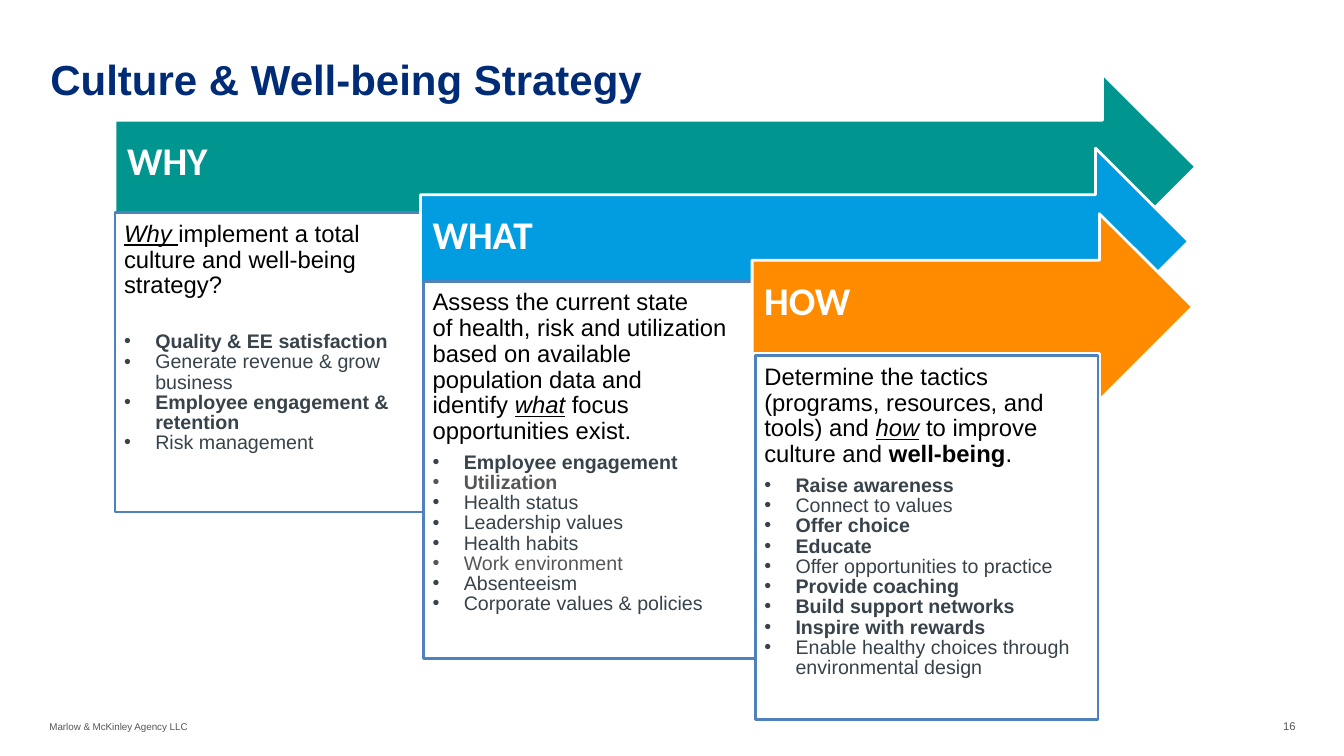
from lxml import etree
from pptx import Presentation
from pptx.dml.color import RGBColor
from pptx.enum import shapes, text
from pptx.oxml import ns
from pptx.util import Inches, Pt

NAVY = RGBColor(0x00, 0x2B, 0x76)
TEAL = RGBColor(0x00, 0x96, 0x8F)
BLUE = RGBColor(0x01, 0x9D, 0xE0)
ORANGE = RGBColor(0xFF, 0x8C, 0x00)
BORDER = RGBColor(0x4F, 0x81, 0xBD)
SLATE = RGBColor(0x37, 0x42, 0x4A)
GREY = RGBColor(0x56, 0x56, 0x56)
WHITE = RGBColor(0xFF, 0xFF, 0xFF)
BLACK = RGBColor(0x00, 0x00, 0x00)

STRONG = {"bold": True}
STRESSED = {"italic": True, "underline": True}
UNDERLINED = {"underline": True}


class StrategySlide:
    """Holds the slide and its text styles."""

    TITLE = {"name": "Arial", "size": Pt(30), "bold": True, "color": NAVY}
    LABEL = {"name": "Calibri", "size": Pt(28), "bold": True, "color": WHITE}
    LEAD = {"name": "Arial", "size": Pt(17), "bold": False, "color": BLACK}
    POINT = {"name": "Arial", "size": Pt(14), "bold": False, "color": SLATE}
    FOOTER = {"name": "Arial", "size": Pt(7), "color": GREY}
    NUMBER = {"name": "Arial", "size": Pt(8), "color": GREY}

    def __init__(self, deck):
        layout = deck.slide_layouts.get_by_name("Comparison")
        self.slide = deck.slides.add_slide(layout)
        self.bodies = [holder for holder in self.slide.placeholders
                       if holder.placeholder_format.idx > 0]

    def place(self, shape, left, top, width, height):
        shape.left, shape.top = Inches(left), Inches(top)
        shape.width, shape.height = Inches(width), Inches(height)

    def frame(self, shape, insets, anchor=text.MSO_ANCHOR.TOP, wrap=True):
        frame = shape.text_frame
        values = {"word_wrap": wrap, "auto_size": text.MSO_AUTO_SIZE.NONE,
                  "vertical_anchor": anchor}
        sides = ("margin_left", "margin_top", "margin_right", "margin_bottom")
        values.update(zip(sides, map(Inches, insets)))
        for key, value in values.items():
            setattr(frame, key, value)
        return frame

    def add_words(self, paragraph, runs, style, align=text.PP_ALIGN.LEFT,
                  spacing=1.0, after=0):
        layout = {"alignment": align, "line_spacing": spacing,
                  "space_before": Pt(0), "space_after": Pt(after)}
        for key, value in layout.items():
            setattr(paragraph, key, value)
        for words, extra in runs:
            values = {**style, **extra}
            for index, line in enumerate(words.split("\n")):
                if index:
                    paragraph.add_line_break()
                    etree.SubElement(paragraph._p[-1], ns.qn("a:rPr"),
                                     sz=str(int(values["size"].pt * 100)))
                run = paragraph.add_run()
                run.text = line
                for key, value in values.items():
                    if key == "color":
                        run.font.color.rgb = value
                    else:
                        setattr(run.font, key, value)

    def bullet(self, paragraph, mark=None):
        indent = Inches(0.31) if mark else 0
        properties = paragraph._p.get_or_add_pPr()
        properties.set("marL", str(indent))
        properties.set("indent", str(-indent))
        if mark:
            etree.SubElement(properties, ns.qn("a:buFont"), typeface="Arial")
            etree.SubElement(properties, ns.qn("a:buChar"), char=mark)
        else:
            etree.SubElement(properties, ns.qn("a:buNone"))

    def paint(self, shape, fill, line):
        shape.fill.solid()
        shape.fill.fore_color.rgb = fill
        shape.line.color.rgb = line
        shape.line.width = Pt(2)

    def title(self, words):
        title = self.slide.shapes.title
        self.place(title, 0.5, 0.6, 12.34, 0.5)
        frame = self.frame(title, (0, 0, 0, 0))
        self.add_words(frame.paragraphs[0], [(words, {})], self.TITLE, spacing=0.86)

    def arrow(self, label, color, left, top, width):
        arrow = self.slide.shapes.add_shape(
            shapes.MSO_SHAPE.RIGHT_ARROW, Inches(left), Inches(top),
            Inches(width), Inches(1.85))
        arrow.shadow.inherit = False
        self.paint(arrow, color, WHITE)
        frame = self.frame(arrow, (0.12, 0.12, 0.28, 0.21), text.MSO_ANCHOR.MIDDLE)
        self.add_words(frame.paragraphs[0], [(label, {})], self.LABEL, spacing=0.9)

    def panel(self, box, lead, points, gap):
        panel = self.bodies.pop(0)
        self.slide.shapes._spTree.append(panel._element)  # bring to front
        self.place(panel, *box)
        self.paint(panel, WHITE, BORDER)
        frame = self.frame(panel, (0.09, 0.09, 0.09, 0.09))
        self.bullet(frame.paragraphs[0])
        self.add_words(frame.paragraphs[0], lead, self.LEAD, spacing=0.9, after=gap)
        for words, extra in points:
            point = frame.add_paragraph()
            self.bullet(point, "•")
            self.add_words(point, [(words, extra)], self.POINT, spacing=0.86)

    def note(self, words, style, box, align, anchor):
        note = self.slide.shapes.add_textbox(*map(Inches, box))
        frame = self.frame(note, (0, 0, 0, 0), anchor, wrap=False)
        self.add_words(frame.paragraphs[0], [(words, {})], style, align)

    def drop_unused(self):
        for holder in self.bodies:
            holder._element.getparent().remove(holder._element)


# Each stage: arrow (label, colour, left, top, width), panel box, lead, points, gap
STAGES = [
    (("WHY", TEAL, 1.14, 0.73, 10.72), (1.14, 2.11, 3.4, 2.97),
     [("Why", STRESSED), (" ", UNDERLINED),
      ("implement a total\nculture and well-being strategy?", {})],
     [("Quality & EE satisfaction", STRONG),
      ("Generate revenue & grow business", {}),
      ("Employee engagement & retention", STRONG),
      ("Risk management", {})], 24),
    (("WHAT", BLUE, 4.17, 1.47, 7.62), (4.2, 2.79, 3.3, 3.74),
     [("Assess the current state\nof health, risk and utilization based on "
       "available population data and\nidentify ", {}),
      ("what", STRESSED), (" focus opportunities exist.", {})],
     [("Employee engagement", STRONG),
      ("Utilization", {"bold": True, "color": GREY}),
      ("Health status", {}),
      ("Leadership values", {}),
      ("Health habits", {}),
      ("Work environment", {"color": GREY}),
      ("Absenteeism", {}),
      ("Corporate values & policies", {})], 6),
    (("HOW", ORANGE, 7.46, 2.12, 4.37), (7.49, 3.53, 3.4, 3.61),
     [("Determine the tactics (programs, resources, and tools) and ", {}),
      ("how", STRESSED), (" to improve culture and ", {}),
      ("well-being", STRONG), (".", {})],
     [("Raise awareness", STRONG),
      ("Connect to values", {}),
      ("Offer choice", STRONG),
      ("Educate", STRONG),
      ("Offer opportunities to practice", {}),
      ("Provide coaching", STRONG),
      ("Build support networks", STRONG),
      ("Inspire with rewards", STRONG),
      ("Enable healthy choices through environmental design", {})], 6),
]


def main():
    deck = Presentation()
    deck.slide_width, deck.slide_height = Inches(13.33), Inches(7.5)
    strategy = StrategySlide(deck)

    # Heading
    strategy.title("Culture & Well-being Strategy")

    # Overlapping stages, from back to front
    for arrow, box, lead, points, gap in STAGES:
        strategy.arrow(*arrow)
        strategy.panel(box, lead, points, gap)
    strategy.drop_unused()

    # Footer and page number
    strategy.note("Marlow & McKinley Agency LLC", strategy.FOOTER,
                  (0.49, 7.16, 4.01, 0.11), text.PP_ALIGN.LEFT,
                  text.MSO_ANCHOR.BOTTOM)
    strategy.note("16", strategy.NUMBER, (12.6, 7.14, 0.25, 0.13),
                  text.PP_ALIGN.RIGHT, text.MSO_ANCHOR.TOP)

    deck.save("out.pptx")


if __name__ == "__main__":
    main()
